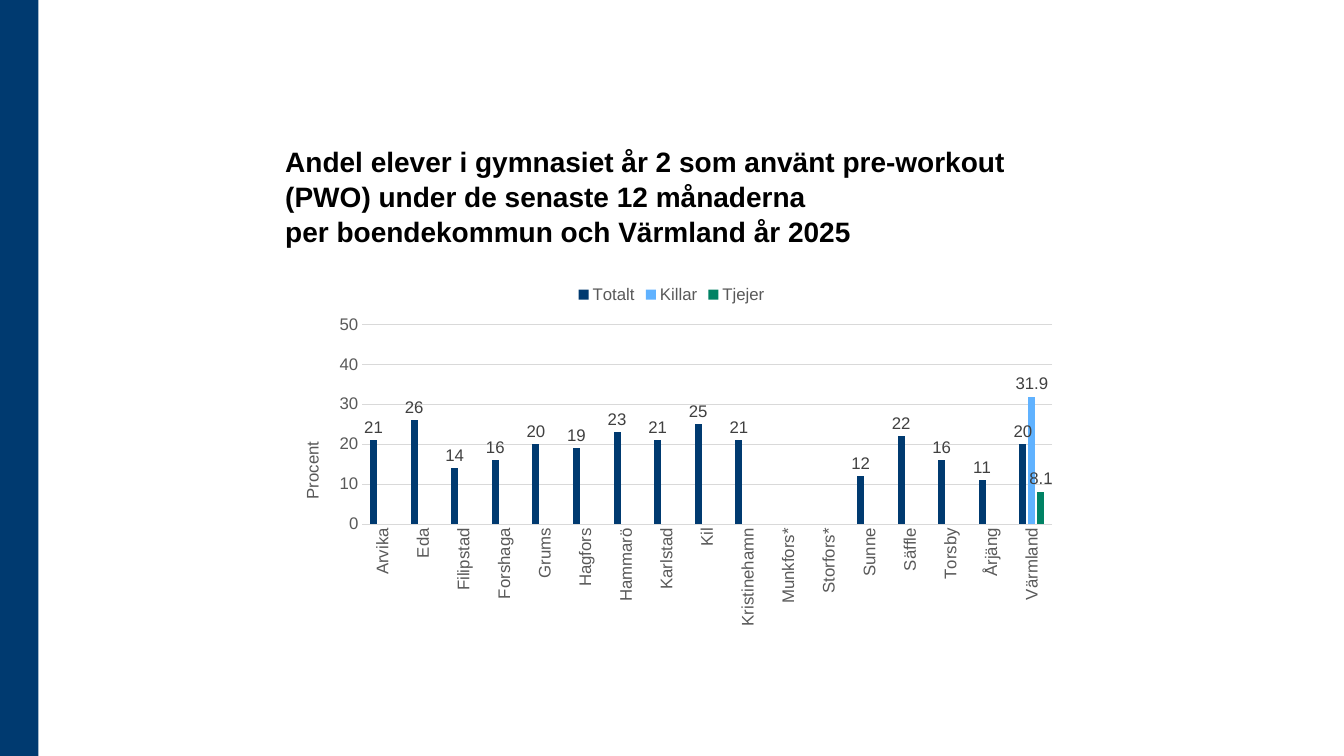
from dataclasses import dataclass

from lxml import etree
from pptx import Presentation
from pptx.chart.data import CategoryChartData
from pptx.dml.color import RGBColor
from pptx.enum.chart import XL_CHART_TYPE as ChartType
from pptx.enum.chart import XL_LABEL_POSITION as LabelPosition
from pptx.enum.chart import XL_LEGEND_POSITION as LegendPosition
from pptx.enum.chart import XL_TICK_MARK as TickMark
from pptx.enum.shapes import MSO_SHAPE as Preset
from pptx.enum.text import MSO_ANCHOR as Anchor
from pptx.enum.text import MSO_AUTO_SIZE as AutoSize
from pptx.enum.text import PP_ALIGN as Align
from pptx.oxml.ns import qn
from pptx.util import Pt


@dataclass(frozen=True)
class Theme:
    font: str = "Arial"
    title_size: int = 20
    chart_size: int = 12
    title: str = "000000"
    axis: str = "595959"
    label: str = "404040"
    grid: str = "D9D9D9"
    navy: str = "003A70"
    sky: str = "60B2FF"
    green: str = "008264"


THEME = Theme()
SLIDE_WIDTH, SLIDE_HEIGHT = 960, 540
TITLE = ("Andel elever i gymnasiet år 2 som använt pre-workout (PWO) under de "
         "senaste 12 månaderna\vper boendekommun och Värmland år 2025")

TOTALS = {
    "Arvika": 21, "Eda": 26, "Filipstad": 14, "Forshaga": 16, "Grums": 20,
    "Hagfors": 19, "Hammarö": 23, "Karlstad": 21, "Kil": 25,
    "Kristinehamn": 21, "Munkfors*": None, "Storfors*": None, "Sunne": 12,
    "Säffle": 22, "Torsby": 16, "Årjäng": 11, "Värmland": 20,
}
# Boys and girls are reported for the whole county only
COUNTY_ONLY = {"Killar": 31.9, "Tjejer": 8.1}


def format_font(font, size, color, bold=False):
    font.name = THEME.font
    font.size = Pt(size)
    font.bold = bold
    font.color.rgb = RGBColor.from_string(color)


def write_text(text_frame, text, size, color, bold=False, align=None, spacing=None):
    paragraph = text_frame.paragraphs[0]
    paragraph.text = text
    paragraph.alignment = align
    paragraph.line_spacing = spacing
    format_font(paragraph.font, size, color, bold)
    for run in paragraph.runs:
        format_font(run.font, size, color, bold)


def draw_band(slide, left, top, width, height):
    band = slide.shapes.add_shape(
        Preset.RECTANGLE, Pt(left), Pt(top), Pt(width), Pt(height))
    band.shadow.inherit = False
    band.fill.solid()
    band.fill.fore_color.rgb = RGBColor.from_string(THEME.navy)
    band.line.fill.background()


def place_title(slide, left, top, width, height):
    title = slide.shapes.title
    title.left, title.top = Pt(left), Pt(top)
    title.width, title.height = Pt(width), Pt(height)
    frame = title.text_frame
    frame.word_wrap = True
    frame.auto_size = AutoSize.NONE
    frame.vertical_anchor = Anchor.BOTTOM
    write_text(frame, TITLE, size=THEME.title_size, color=THEME.title,
               bold=True, align=Align.LEFT, spacing=1.04)


def set_layout(parent, index, **settings):
    """Give a chart part a manual layout, in fractions of the chart."""
    for old in parent.findall(qn("c:layout")):
        parent.remove(old)
    layout = etree.Element(qn("c:layout"))
    parent.insert(index, layout)
    manual = etree.SubElement(layout, qn("c:manualLayout"))
    for name, value in settings.items():
        etree.SubElement(manual, qn(f"c:{name}")).set("val", str(value))


def format_axes(chart):
    category_axis, value_axis = chart.category_axis, chart.value_axis
    for axis in (category_axis, value_axis):
        axis.major_tick_mark = axis.minor_tick_mark = TickMark.NONE
        format_font(axis.tick_labels.font, THEME.chart_size, THEME.axis)

    value_axis.minimum_scale, value_axis.maximum_scale = 0, 50
    value_axis.major_unit = 10
    value_axis.tick_labels.number_format = "0"
    value_axis.tick_labels.number_format_is_linked = False
    value_axis.format.line.fill.background()
    value_axis.has_major_gridlines = True
    for line in (category_axis.format.line, value_axis.major_gridlines.format.line):
        line.color.rgb = RGBColor.from_string(THEME.grid)
        line.width = Pt(0.75)
    write_text(value_axis.axis_title.text_frame, "Procent",
               size=THEME.chart_size, color=THEME.axis)

    # Category names and axis title read upwards
    for body in chart.element.xpath(".//c:catAx/c:txPr/a:bodyPr | .//c:valAx/c:title//a:bodyPr"):
        body.set("rot", "-5400000")
        body.set("vert", "horz")


def format_series(plot):
    plot.gap_width, plot.overlap = 219, -27
    plot.vary_by_categories = False
    for series, color in zip(plot.series, (THEME.navy, THEME.sky, THEME.green)):
        series.format.fill.solid()
        series.format.fill.fore_color.rgb = RGBColor.from_string(color)
        series.invert_if_negative = False
        labels = series.data_labels
        labels.show_value = True
        labels.position = LabelPosition.OUTSIDE_END
        labels.number_format = "0" if series.name == "Totalt" else "General"
        labels.number_format_is_linked = False
        format_font(labels.font, THEME.chart_size, THEME.label)


def draw_chart(slide, left, top, width, height):
    data = CategoryChartData()
    data.categories = list(TOTALS)
    data.add_series("Totalt", list(TOTALS.values()))
    for name, value in COUNTY_ONLY.items():
        data.add_series(name, [None] * (len(TOTALS) - 1) + [value])
    chart = slide.shapes.add_chart(
        ChartType.COLUMN_CLUSTERED, Pt(left), Pt(top), Pt(width), Pt(height), data).chart
    chart.has_title = False
    format_font(chart.font, THEME.chart_size, THEME.title)

    chart.has_legend = True
    chart.legend.position = LegendPosition.TOP
    chart.legend.include_in_layout = False
    format_font(chart.legend.font, THEME.chart_size, THEME.axis)

    format_axes(chart)
    format_series(chart.plots[0])

    # Plot area and axis title positions
    plot_area = chart.element.xpath(".//c:plotArea")[0]
    set_layout(plot_area, 0, layoutTarget="inner", xMode="edge", yMode="edge",
               x=0.11, y=0.14, w=0.87, h=0.56)
    axis_title = chart.element.xpath(".//c:valAx/c:title")[0]
    set_layout(axis_title, 1, xMode="edge", yMode="edge", x=0.03, y=0.46)


def main():
    presentation = Presentation()
    presentation.slide_width = Pt(SLIDE_WIDTH)
    presentation.slide_height = Pt(SLIDE_HEIGHT)
    slide = presentation.slides.add_slide(presentation.slide_layouts[5])

    left, width = 196.5, 566.5
    draw_band(slide, 0, 0, 27.5, SLIDE_HEIGHT)
    place_title(slide, left, 76.5, width, 104.5)
    draw_chart(slide, left, 196, width, 255)
    presentation.save("out.pptx")


if __name__ == "__main__":
    main()
